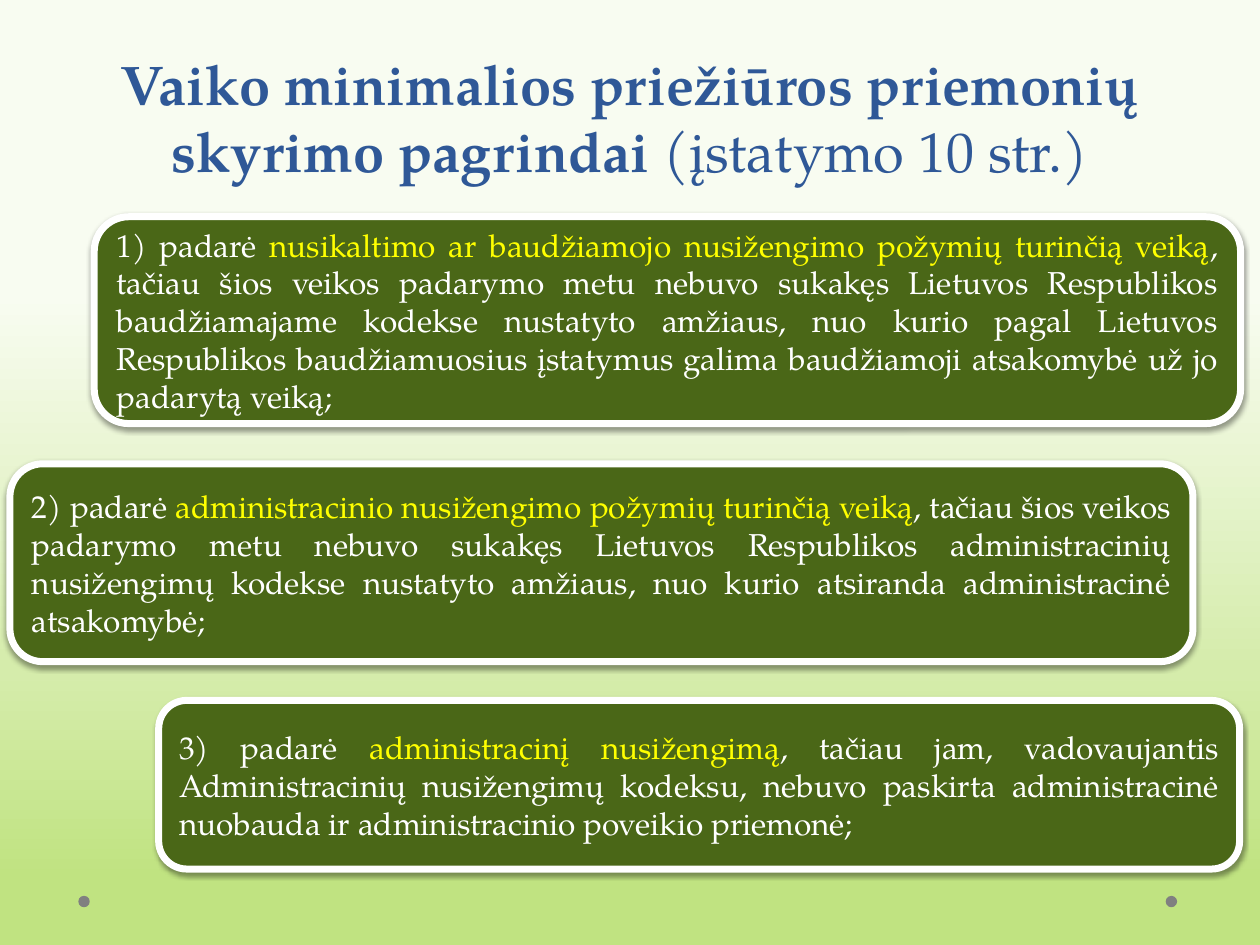
"""Build the slide on the grounds for minimal child supervision measures."""
from copy import deepcopy

from lxml import etree
from pptx import Presentation, util as u
from pptx.dml.color import RGBColor
from pptx.enum import shapes, text
from pptx.oxml.ns import qn

COLORS = {
    "title": "2F5897",
    "card": "4A6717",
    "white": "FFFFFF",
    "highlight": "FFFF00",
    "dot": "808080",
    "shadow": "000000",
}
BACKGROUND_STOPS = [(0.31, "F8FCF1"), (0.71, "D5ECAB"), (0.93, "C0E381")]
CARDS = [
    ((1.9, 4.37, 23.11, 4.17), "1) padarė ",
     "nusikaltimo ar baudžiamojo nusižengimo požymių turinčią veiką",
     ", tačiau šios veikos padarymo metu nebuvo sukakęs Lietuvos Respublikos "
     "baudžiamajame kodekse nustatyto amžiaus, nuo kurio pagal Lietuvos Respublikos "
     "baudžiamuosius įstatymus galima baudžiamoji atsakomybė už jo padarytą veiką;"),
    ((0.2, 9.35, 23.85, 3.99), "2) padarė ",
     "administracinio nusižengimo požymių turinčią veiką",
     ", tačiau šios veikos padarymo metu nebuvo sukakęs Lietuvos Respublikos "
     "administracinių nusižengimų kodekse nustatyto amžiaus, nuo kurio atsiranda "
     "administracinė atsakomybė;"),
    ((3.2, 14.12, 21.79, 3.4), "3) padarė ",
     "administracinį nusižengimą",
     ", tačiau jam, vadovaujantis Administracinių nusižengimų kodeksu, nebuvo paskirta "
     "administracinė nuobauda ir administracinio poveikio priemonė;"),
]


def add_run(paragraph, wording, color, **formats):
    run = paragraph.add_run()
    run.text = wording
    run.font.color.rgb = RGBColor.from_string(COLORS[color])
    for name, value in {"name": "TeX Gyre Pagella", **formats}.items():
        setattr(run.font, name, value)


def add_filled(slide, kind, box, color):
    shape = slide.shapes.add_shape(kind, *map(u.Cm, box))
    shape.shadow.inherit = False
    shape.fill.solid()
    shape.fill.fore_color.rgb = RGBColor.from_string(COLORS[color])
    return shape


presentation = Presentation()
presentation.slide_width = u.Cm(25.4)
presentation.slide_height = u.Cm(19.05)
slide = presentation.slides.add_slide(presentation.slide_layouts[5])

fill = slide.background.fill
fill.gradient()
fill.gradient_angle = 270
stop_list = next(slide.element.iter(qn("a:gsLst")))
stop_list.append(deepcopy(stop_list[0]))
for stop, (position, color) in zip(fill.gradient_stops, BACKGROUND_STOPS):
    stop.position = position
    stop.color.rgb = RGBColor.from_string(color)

for left in (23.5, 1.58):
    dot = add_filled(slide, shapes.MSO_SHAPE.OVAL, (left, 18.06, 0.23, 0.23), "dot")
    dot.line.fill.background()

title = slide.shapes.title
for name, value in {"left": 1.27, "top": 1.12, "width": 22.86, "height": 2.72}.items():
    setattr(title, name, u.Cm(value))
frame_formats = {
    "word_wrap": True,
    "auto_size": text.MSO_AUTO_SIZE.NONE,
    "vertical_anchor": text.MSO_ANCHOR.BOTTOM,
}
for name, value in frame_formats.items():
    setattr(title.text_frame, name, value)
paragraph = title.text_frame.paragraphs[0]
paragraph.alignment = text.PP_ALIGN.CENTER
add_run(paragraph, "Vaiko minimalios priežiūros priemonių skyrimo pagrindai ", "title",
        size=u.Pt(32), bold=True)
add_run(paragraph, "(įstatymo 10 str.)", "title", size=u.Pt(32), bold=False)

for box, opening, highlight, remainder in CARDS:
    card = add_filled(slide, shapes.MSO_SHAPE.ROUNDED_RECTANGLE, box, "card")
    card.line.color.rgb = RGBColor.from_string(COLORS["white"])
    card.line.width = u.Pt(4)
    effects = card.element.spPr.find(qn("a:effectLst"))
    shadow = etree.SubElement(effects, qn("a:outerShdw"), blurRad=str(u.Pt(3.1)),
                              dist=str(u.Pt(1.6)), dir="5400000", rotWithShape="0")
    shadow_color = etree.SubElement(shadow, qn("a:srgbClr"), val=COLORS["shadow"])
    etree.SubElement(shadow_color, qn("a:alpha"), val="38000")
    card.text_frame.word_wrap = True
    card.text_frame.vertical_anchor = text.MSO_ANCHOR.MIDDLE
    paragraph = card.text_frame.paragraphs[0]
    paragraph.alignment = text.PP_ALIGN.JUSTIFY
    for wording, color in ((opening, "white"), (highlight, "highlight"), (remainder, "white")):
        add_run(paragraph, wording, color, size=u.Pt(18))

presentation.save("out.pptx")
